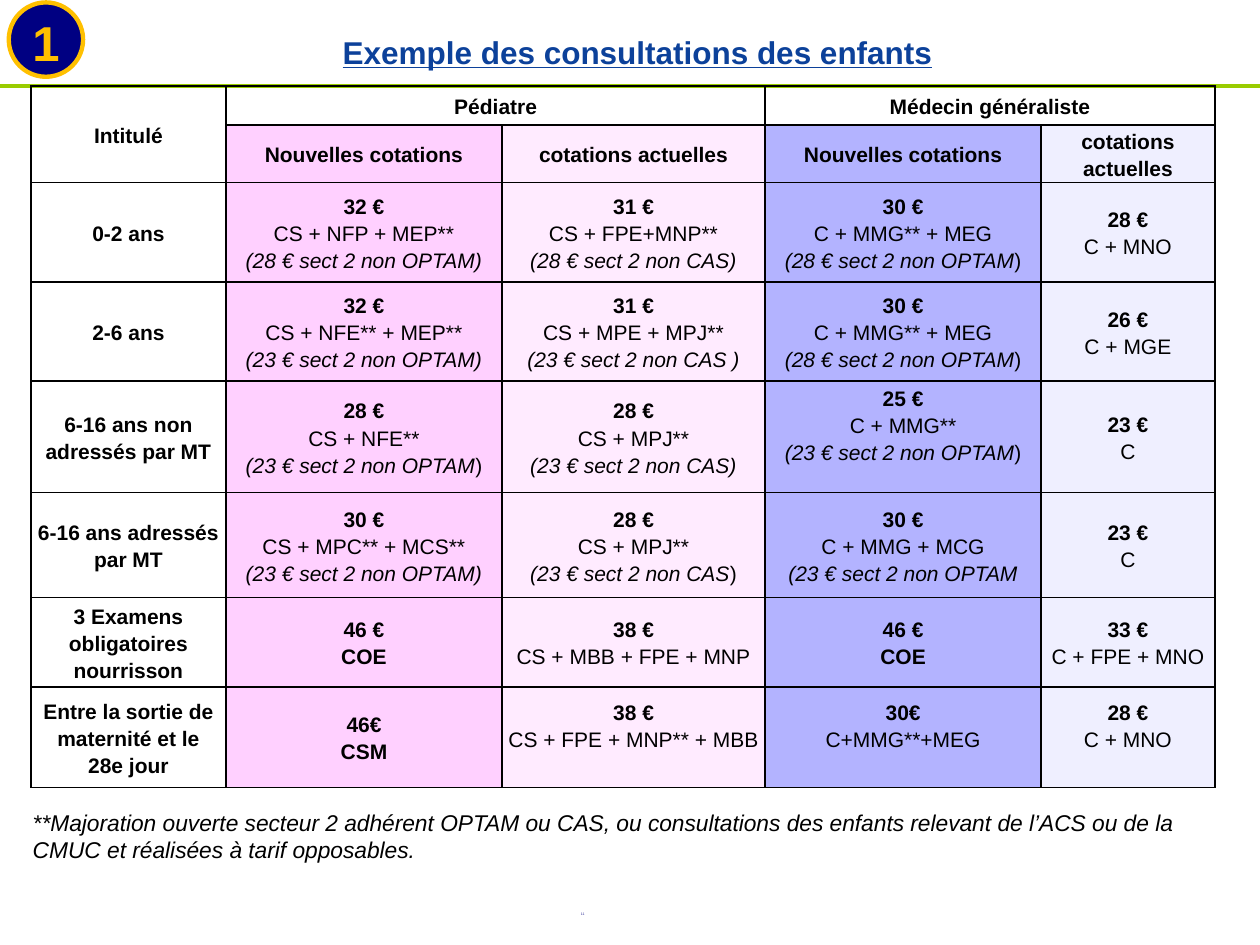
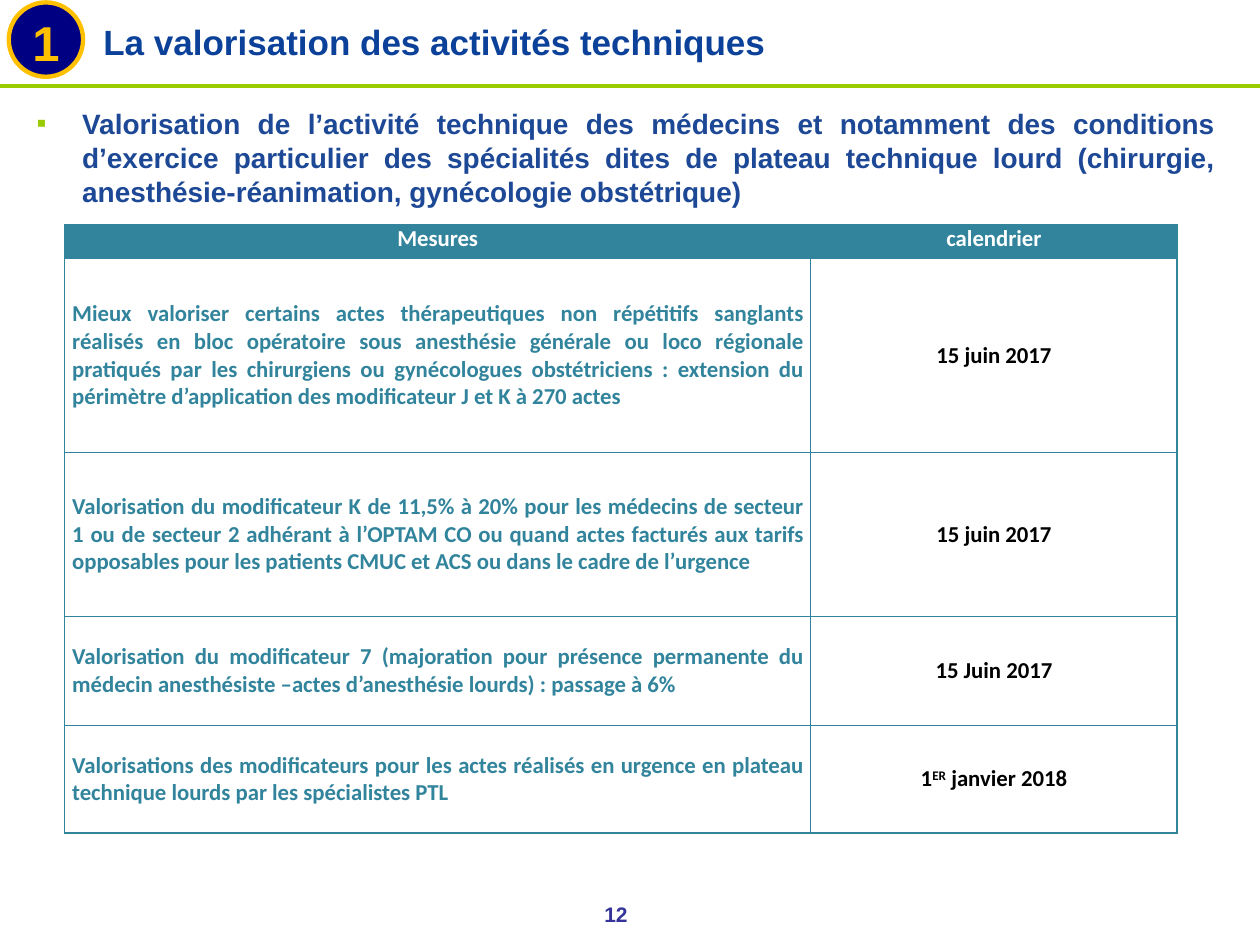
from lxml import etree
from pptx import Presentation
from pptx import util as u
from pptx.dml.color import RGBColor
from pptx.enum import shapes, text
from pptx.oxml import ns

Pt = u.Pt
WIDE, HIGH = 720, 540
BLUE, NAVY, GOLD, LIME = "0C419A", "000082", "FFC000", "99CC00"
BODY, FOOT, TEAL, BLACK, WHITE = "1D4896", "333399", "31849B", "000000", "FFFFFF"
TINTS = [None, "FFD0FF", "FFEBFF", "B3B3FF", "EFEFFF"]
LEFT, MID, JUST = text.PP_ALIGN.LEFT, text.PP_ALIGN.CENTER, text.PP_ALIGN.JUSTIFY


def tone(code):
    return RGBColor.from_string(code)


def child(parent, tag, **attrs):
    return etree.SubElement(parent, ns.qn(tag), attrs)


def put(frame, paras, size=12, color=BLACK, font="Arial", bold=False, italic=False,
        under=False, align=LEFT, space=None, inset=(0, 0, 0, 0), wrap=True,
        anchor=text.MSO_ANCHOR.MIDDLE):
    """Fill a frame; each paragraph is a string or a list of (text, changes)."""
    frame.word_wrap = wrap
    frame.vertical_anchor = anchor
    (frame.margin_left, frame.margin_top,
     frame.margin_right, frame.margin_bottom) = map(Pt, inset)
    for i, parts in enumerate([paras] if isinstance(paras, str) else paras):
        para = frame.add_paragraph() if i else frame.paragraphs[0]
        para.alignment = align
        if space:
            para.line_spacing = space
        for words, diff in [(parts, {})] if isinstance(parts, str) else parts:
            run = para.add_run()
            run.text = words
            face = run.font
            face.name, face.size = font, Pt(size)
            face.color.rgb = tone(color)
            face.bold = diff.get("bold", bold)
            face.italic = diff.get("italic", italic)
            face.underline = under
            if "raise" in diff:
                run._r.get_or_add_rPr().set("baseline", diff["raise"])


def label(slide, box, paras, **form):
    area = slide.shapes.add_textbox(*map(Pt, box))
    put(area.text_frame, paras, **form)
    return area


def edge(cell, color):
    """Draw the four borders of a cell, ahead of its fill."""
    props = cell._tc.get_or_add_tcPr()
    for i, side in enumerate(("a:lnL", "a:lnR", "a:lnT", "a:lnB")):
        line = child(props, side, w=str(Pt(1)))
        child(child(line, "a:solidFill"), "a:srgbClr", val=color)
        props.insert(i, line)


def grid(slide, left, top, cols, rows, color):
    """Add a plain table with borders and no fills."""
    table = slide.shapes.add_table(len(rows), len(cols), Pt(left), Pt(top),
                                   Pt(sum(cols)), Pt(sum(rows))).table
    table.first_row = table.horz_banding = False
    for col, width in zip(table.columns, cols):
        col.width = Pt(width)
    for row, height in zip(table.rows, rows):
        row.height = Pt(height)
    for cell in table.iter_cells():
        cell.fill.background()
        edge(cell, color)
    return table


def paint(cell, color):
    if color:
        cell.fill.solid()
        cell.fill.fore_color.rgb = tone(color)


def base(deck, title, box, number, **form):
    """Start a slide: green rule, title, number badge and page number."""
    slide = deck.slides.add_slide(deck.slide_layouts[6])
    rule = slide.shapes.add_connector(shapes.MSO_CONNECTOR.STRAIGHT,
                                      0, Pt(49), Pt(WIDE), Pt(49))
    rule.line.color.rgb, rule.line.width = tone(LIME), Pt(2.25)
    child(rule._element.spPr, "a:effectLst")
    label(slide, box, title, color=BLUE, bold=True, inset=(7.2, 3.6, 7.2, 3.6), **form)
    badge = slide.shapes.add_shape(shapes.MSO_SHAPE.OVAL, Pt(5), Pt(1.4), Pt(42.5), Pt(42.5))
    badge.shadow.inherit = False
    badge.fill.solid()
    badge.fill.fore_color.rgb = tone(NAVY)
    badge.line.color.rgb, badge.line.width = tone(GOLD), Pt(2.5)
    put(badge.text_frame, "1", size=28, color=GOLD, bold=True, align=MID,
        inset=(0, 3, 0, 0), wrap=False)
    label(slide, (332, 514, 40, 17), number[0], color=FOOT, **number[1])
    return slide


# Fees: the first line is bold, codes are plain, the last line is in italics.
# A bar sets off a closing bracket that stays upright.
FEES = [
    ("0-2 ans", "32 €\nCS + NFP + MEP**\n(28 € sect 2 non OPTAM)",
     "31 €\nCS + FPE+MNP**\n(28 € sect 2 non CAS)",
     "30 €\nC + MMG** + MEG\n(28 € sect 2 non OPTAM|)", "28 €\nC + MNO"),
    ("2-6 ans", "32 €\nCS + NFE** + MEP**\n(23 € sect 2 non OPTAM)",
     "31 €\nCS + MPE + MPJ**\n(23 € sect 2 non CAS )",
     "30 €\nC + MMG** + MEG\n(28 € sect 2 non OPTAM|)", "26 €\nC + MGE"),
    ("6-16 ans non adressés par MT", "28 €\nCS + NFE**\n(23 € sect 2 non OPTAM|)",
     "28 €\nCS + MPJ**\n(23 € sect 2 non CAS)",
     "25 €\nC + MMG**\n(23 € sect 2 non OPTAM|)", "23 €\nC"),
    ("6-16 ans adressés par MT", "30 €\nCS + MPC** + MCS**\n(23 € sect 2 non OPTAM)",
     "28 €\nCS + MPJ**\n(23 € sect 2 non CAS|)",
     "30 €\nC + MMG + MCG\n(23 € sect 2 non OPTAM", "23 €\nC"),
    ("3 Examens obligatoires nourrisson", "46 €\nCOE", "38 €\nCS + MBB + FPE + MNP",
     "46 €\nCOE", "33 €\nC + FPE + MNO"),
    ("Entre la sortie de maternité et le 28e jour", "46€\nCSM",
     "38 €\nCS + FPE + MNP** + MBB", "30€\nC+MMG**+MEG", "28 €\nC + MNO"),
]
RAISED = {(4, 3), (7, 2), (7, 3), (7, 4)}  # cells set above the middle


def parse_fee(words):
    paras = []
    for i, line in enumerate(words.split("\n")):
        main, _, tail = line.partition("|")
        runs = [(main, {"bold": i == 0 or main in ("COE", "CSM"),
                        "italic": main.startswith("(")})]
        paras.append(runs + [(tail, {})] if tail else runs)
    return paras


def fees(slide, left, top):
    table = grid(slide, left, top, [111.6, 157.6, 150.5, 157.6, 99.4],
                 [22.3, 31.1, 56.7, 56.7, 61.7, 60, 51.1, 57.4], BLACK)
    # Merged heads
    for start, end in (((0, 0), (1, 0)), ((0, 1), (0, 2)), ((0, 3), (0, 4))):
        table.cell(*start).merge(table.cell(*end))
    heads = [("Intitulé", "Pédiatre", None, "Médecin généraliste", None),
             (None,) + ("Nouvelles cotations", "cotations actuelles") * 2]
    for r, row in enumerate(heads + FEES):
        for c, words in enumerate(row):
            if not words:
                continue
            cell = table.cell(r, c)
            low = 14 if (r, c) in RAISED else 0
            put(cell.text_frame, parse_fee(words), align=MID, space=1.15)
            cell.vertical_anchor = text.MSO_ANCHOR.MIDDLE
            cell.margin_left = cell.margin_right = Pt(3.5)
            cell.margin_top, cell.margin_bottom = 0, Pt(low)
            paint(cell, TINTS[c] if r else None)


PLAN = [
    ("Mieux valoriser certains actes thérapeutiques non répétitifs sanglants réalisés en bloc "
     "opératoire sous anesthésie générale ou loco régionale pratiqués par les chirurgiens ou "
     "gynécologues obstétriciens : extension du périmètre d’application des modificateur J et K "
     "à 270 actes", "15 juin 2017"),
    ("Valorisation du modificateur K de 11,5% à 20% pour les médecins de secteur 1 ou de "
     "secteur 2 adhérant à l’OPTAM CO ou quand actes facturés aux tarifs opposables pour les "
     "patients CMUC et ACS ou dans le cadre de l’urgence", "15 juin 2017"),
    ("Valorisation du modificateur 7 (majoration pour présence permanente du médecin "
     "anesthésiste –actes d’anesthésie lourds) : passage à 6%", "15 Juin 2017"),
    ("Valorisations des modificateurs pour les actes réalisés en urgence en plateau technique "
     "lourds par les spécialistes PTL",
     [[("1", {}), ("ER", {"raise": "30000"}), (" janvier 2018", {})]]),
]


def plan(slide, left, top):
    table = grid(slide, left, top, [426.2, 209.5], [19.4, 110.9, 93.7, 62.3, 61.4], TEAL)
    for r, row in enumerate([("Mesures", "calendrier")] + PLAN):
        for c, words in enumerate(row):
            cell = table.cell(r, c)
            ink = (BLACK if c else TEAL) if r else WHITE
            put(cell.text_frame, words, size=13, font="Calibri", bold=True, color=ink,
                align=JUST if r and not c else MID)
            cell.vertical_anchor = text.MSO_ANCHOR.MIDDLE if r else text.MSO_ANCHOR.TOP
            cell.margin_left = cell.margin_right = Pt(4.3)
            cell.margin_top = cell.margin_bottom = 0
            paint(cell, None if r else TEAL)


def point(slide, box, words):
    """Justified paragraph with a green square bullet."""
    area = label(slide, box, words, size=16, color=BODY, bold=True, align=JUST,
                 space=Pt(19.4), anchor=text.MSO_ANCHOR.TOP)
    props = area.text_frame.paragraphs[0]._p.get_or_add_pPr()
    props.set("marL", str(Pt(26)))
    props.set("indent", str(-Pt(26)))
    child(child(props, "a:buClr"), "a:srgbClr", val=LIME)
    child(props, "a:buFont", typeface="Arial")
    child(props, "a:buChar", char="▪")


def main():
    deck = Presentation()
    deck.slide_width, deck.slide_height = Pt(WIDE), Pt(HIGH)

    # Children's visits
    slide = base(deck, "Exemple des consultations des enfants", (8.6, 9.4, 711.4, 40),
                 ("11", {"size": 2}), size=18, under=True, align=MID)
    fees(slide, 17.6, 49)
    label(slide, (18.7, 458, 683, 39),
          "**Majoration ouverte secteur 2 adhérent OPTAM ou CAS, ou consultations des enfants "
          "relevant de l’ACS ou de la CMUC et réalisées à tarif opposables.",
          size=13, italic=True, space=Pt(16))

    # Technical work
    slide = base(deck, "La valorisation des activités techniques", (52, 3.6, 668, 40),
                 ("12", {"size": 12, "bold": True, "align": MID}), size=20)
    point(slide, (21, 60.6, 673.5, 60),
          "Valorisation de l’activité technique des médecins et notamment des conditions "
          "d’exercice particulier des spécialités dites de plateau technique lourd (chirurgie, "
          "anesthésie-réanimation, gynécologie obstétrique)")
    plan(slide, 37, 128.3)
    deck.save("out.pptx")


if __name__ == "__main__":
    main()
